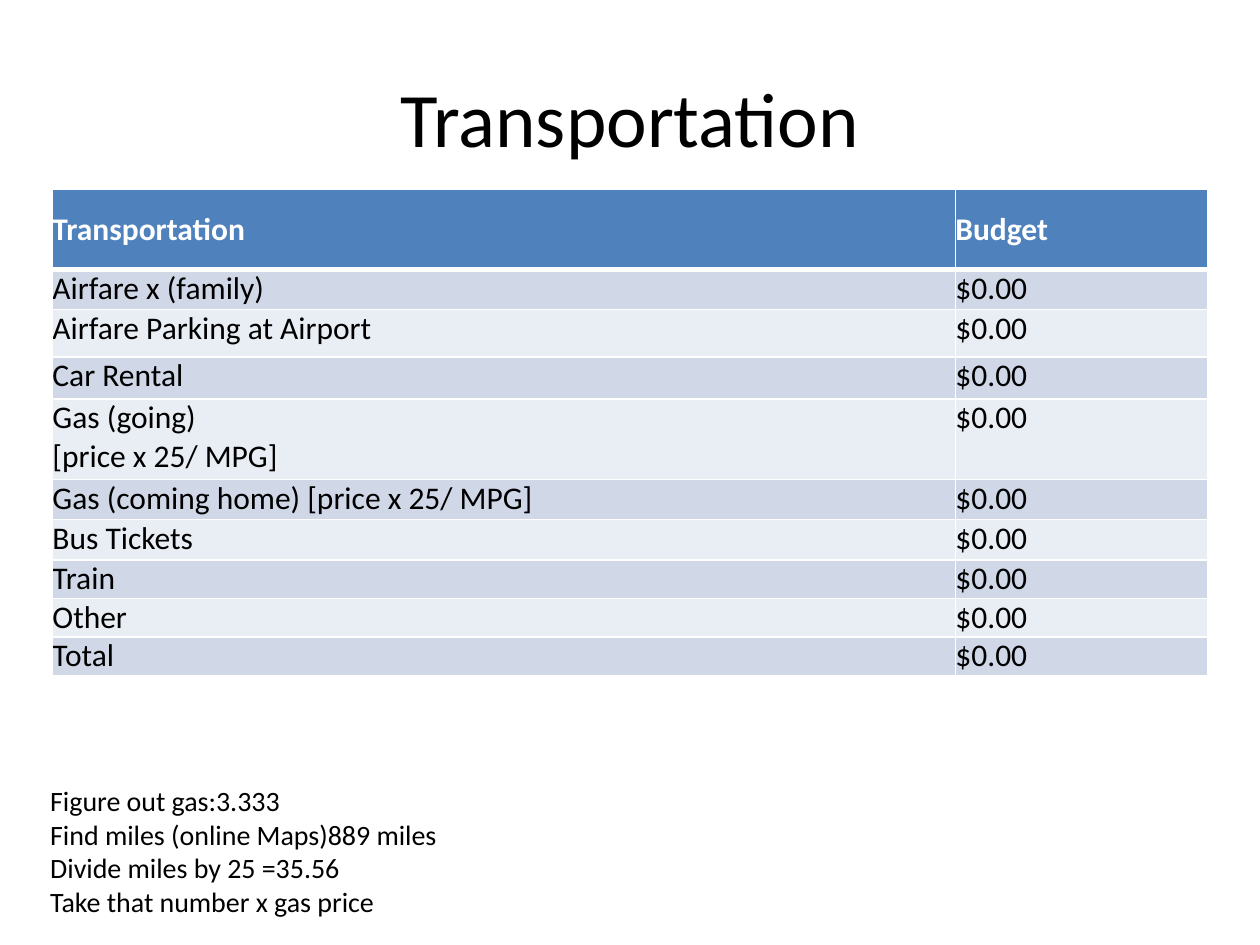
from pptx import Presentation
from pptx import util as u
from pptx.dml.color import RGBColor
from pptx.enum import text
from pptx.oxml import ns
from lxml import etree

COLORS = {
    "ink": "000000",
    "paper": "FFFFFF",
    "header": "4F81BD",
    "odd": "D0D8E8",
    "even": "E9EDF4",
}
AMOUNT = "$0.00"
EXPENSES = [
    ("Airfare x (family)", 23),
    ("Airfare Parking at Airport", 27),
    ("Car Rental", 24),
    ("Gas (going)\n[price x 25/ MPG]", 46),
    ("Gas (coming home) [price x 25/ MPG]", 23),
    ("Bus Tickets", 23),
    ("Train", 22),
    ("Other", 22),
    ("Total", 22),
]
GAS_STEPS = "\n".join([
    "Figure out gas:3.333",
    "Find miles (online Maps)889 miles",
    "Divide miles by 25 =35.56",
    "Take that number x gas price",
])


def rgb(name):
    return RGBColor.from_string(COLORS[name])


def write(frame, wording, size, color="ink", align=text.PP_ALIGN.LEFT, bold=False):
    frame.text = wording
    font_format = {"name": "Calibri", "size": u.Pt(size), "bold": bold}
    for paragraph in frame.paragraphs:
        paragraph.alignment = align
        for run in paragraph.runs:
            for key, value in font_format.items():
                setattr(run.font, key, value)
            run.font.color.rgb = rgb(color)


def add_text(slide, box, wording, size, frame_format, align=text.PP_ALIGN.LEFT):
    frame = slide.shapes.add_textbox(*map(u.Pt, box)).text_frame
    write(frame, wording, size, align=align)
    for key, value in frame_format.items():
        setattr(frame, key, value)


def add_borders(cell, bottom):
    properties = cell._tc.get_or_add_tcPr()
    widths = {"lnL": 1, "lnR": 1, "lnT": 1, "lnB": bottom}
    for position, (side, width) in enumerate(widths.items()):
        line = etree.Element(ns.qn(f"a:{side}"), w=str(int(u.Pt(width))))
        fill = etree.SubElement(line, ns.qn("a:solidFill"))
        etree.SubElement(fill, ns.qn("a:srgbClr"), val=COLORS["paper"])
        properties.insert(position, line)


def fill_cell(cell, wording, row):
    is_header = row == 0
    anchor = text.MSO_ANCHOR.MIDDLE if is_header else text.MSO_ANCHOR.TOP
    cell_format = {"vertical_anchor": anchor}
    for side in ("left", "top", "right", "bottom"):
        cell_format[f"margin_{side}"] = 0
    for key, value in cell_format.items():
        setattr(cell, key, value)
    write(cell.text_frame, wording, 18, "paper" if is_header else "ink", bold=is_header)
    cell.fill.solid()
    cell.fill.fore_color.rgb = rgb("header" if is_header else ("even", "odd")[row % 2])
    add_borders(cell, 3 if is_header else 1)


def add_budget(slide):
    lines = [("Transportation", "Budget", 46)]
    lines += [(expense, AMOUNT, height) for expense, height in EXPENSES]
    total = sum(height for _, _, height in lines)
    budget = slide.shapes.add_table(
        len(lines), 2, u.Pt(30), u.Pt(108), u.Pt(660), u.Pt(total)).table
    for column, width in zip(budget.columns, (516, 144)):
        column.width = u.Pt(width)
    for row, (expense, amount, height) in enumerate(lines):
        budget.rows[row].height = u.Pt(height)
        for column, wording in enumerate((expense, amount)):
            fill_cell(budget.cell(row, column), wording, row)


def main():
    deck = Presentation()
    deck.slide_width, deck.slide_height = u.Pt(720), u.Pt(540)
    slide = deck.slides.add_slide(deck.slide_layouts[6])
    add_text(slide, (36, 21.6, 648, 90), "Transportation", 44,
             {"word_wrap": True, "vertical_anchor": text.MSO_ANCHOR.MIDDLE},
             text.PP_ALIGN.CENTER)
    add_budget(slide)
    add_text(slide, (21.6, 444.24, 241.2, 84.96), GAS_STEPS, 16,
             {"word_wrap": False, "auto_size": text.MSO_AUTO_SIZE.SHAPE_TO_FIT_TEXT})
    deck.save("out.pptx")


if __name__ == "__main__":
    main()
